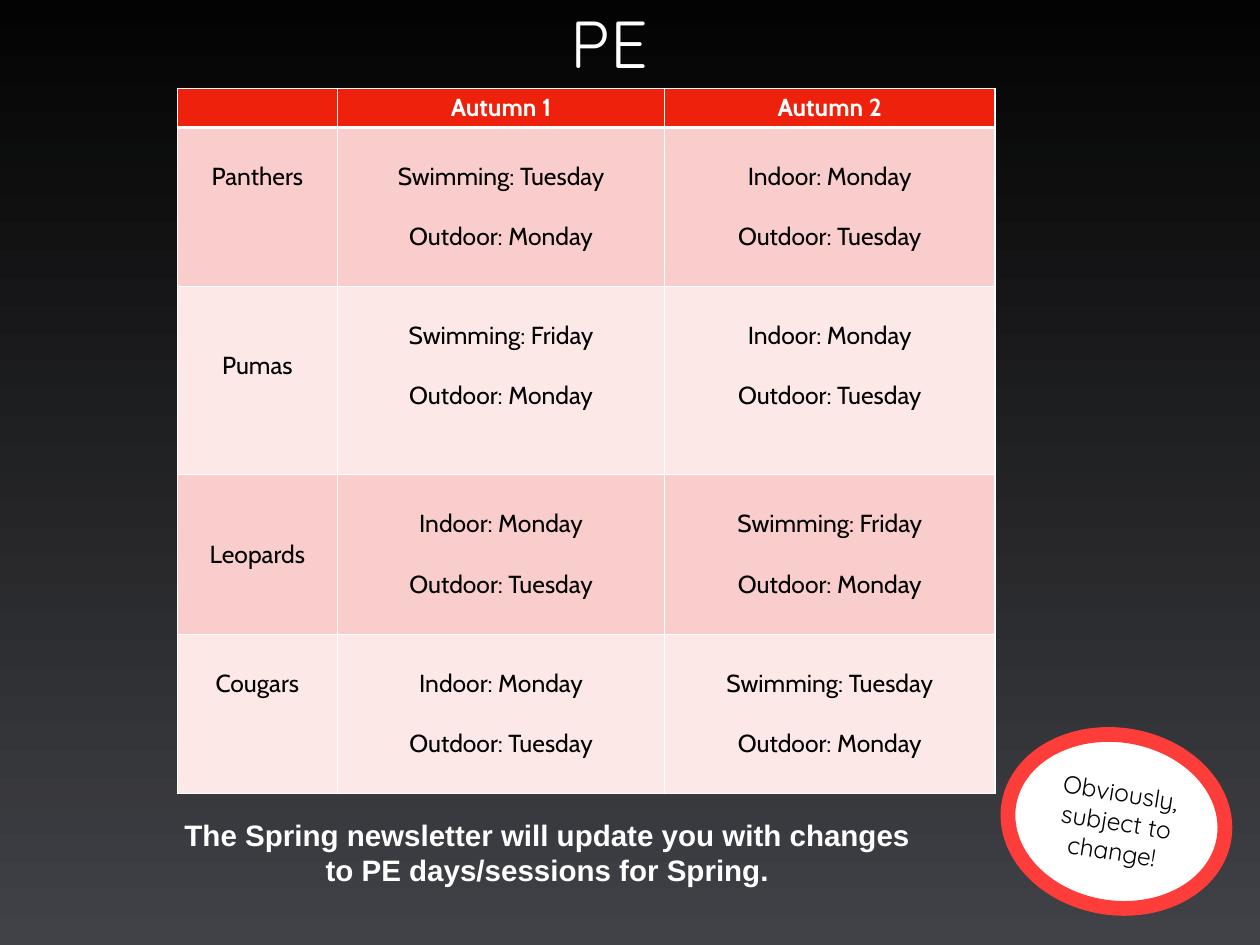
from lxml.etree import SubElement
from pptx import Presentation
from pptx.dml.color import RGBColor
from pptx.enum.shapes import MSO_SHAPE
from pptx.enum.text import MSO_ANCHOR, PP_ALIGN
from pptx.oxml.ns import qn
from pptx.util import Inches, Pt

WHITE = RGBColor(0xFF, 0xFF, 0xFF)
BLACK = RGBColor(0x00, 0x00, 0x00)
BG_TOP = RGBColor(0x03, 0x03, 0x03)
BG_BOTTOM = RGBColor(0x41, 0x42, 0x47)
HEADER = RGBColor(0xEE, 0x22, 0x0C)
BANDS = [RGBColor(0xFC, 0xE8, 0xE7), RGBColor(0xF8, 0xCD, 0xCC)]
RING = RGBColor(0xFC, 0x3D, 0x39)
LINE = 0.34  # height of one line of table text


def write(sp, text, font, size, color, anchor, bold=False):
    tf = sp.text_frame
    tf.word_wrap = True
    tf.vertical_anchor = anchor
    tf.margin_left = tf.margin_right = Inches(0.06)
    tf.margin_top = tf.margin_bottom = Inches(0.06)
    p = tf.paragraphs[0]
    p.text = text
    p.alignment = PP_ALIGN.CENTER
    p.font.name, p.font.size, p.font.bold = font, Pt(size), bold
    p.font.color.rgb = color


def add_border(cell, side, width):
    ln = SubElement(cell._tc.get_or_add_tcPr(), qn(f"a:ln{side}"), w=str(Pt(width)))
    fill = SubElement(ln, qn("a:solidFill"))
    SubElement(fill, qn("a:srgbClr"), val=str(WHITE))


prs = Presentation()
prs.slide_width, prs.slide_height = Inches(14.22), Inches(10.67)
s = prs.slides.add_slide(prs.slide_layouts[6])

# Background
bg = s.background.fill
bg.gradient()
bg.gradient_angle = 270
for stop, color in zip(bg.gradient_stops, (BG_TOP, BG_BOTTOM)):
    stop.color.rgb = color

# Title
title = s.shapes.add_textbox(Inches(1.16), Inches(0.32), Inches(11.44), Inches(0.66))
write(title, "PE", "Quicksand", 54, WHITE, MSO_ANCHOR.BOTTOM)

# Timetable: class, sessions per half term
rows = [
    ("", "Autumn 1", "Autumn 2"),
    ("Panthers", "Swimming: Tuesday\nOutdoor: Monday", "Indoor: Monday\nOutdoor: Tuesday"),
    ("Pumas", "Swimming: Friday\nOutdoor: Monday", "Indoor: Monday\nOutdoor: Tuesday"),
    ("Leopards", "Indoor: Monday\nOutdoor: Tuesday", "Swimming: Friday\nOutdoor: Monday"),
    ("Cougars", "Indoor: Monday\nOutdoor: Tuesday", "Swimming: Tuesday\nOutdoor: Monday"),
]
col_widths = [1.81, 3.69, 3.73]
row_heights = [0.44, 1.79, 2.13, 1.8, 1.8]
lowered = ("Pumas", "Leopards")  # names set one line further down

table = s.shapes.add_table(len(rows), len(col_widths), Inches(2), Inches(1),
                           Inches(sum(col_widths)), Inches(sum(row_heights))).table
for col, width in zip(table.columns, col_widths):
    col.width = Inches(width)
for i, (row, height) in enumerate(zip(rows, row_heights)):
    table.rows[i].height = Inches(height)
    for j, text in enumerate(row):
        cell = table.cell(i, j)
        for side in "LRTB":
            thick = (i, side) in ((0, "B"), (1, "T"))
            add_border(cell, side, 3 if thick else 1)
        cell.fill.solid()
        cell.fill.fore_color.rgb = BANDS[i % 2] if i else HEADER
        lines_above = (2 if text in lowered else 1) if i else 0
        cell.margin_top = Inches(0.05 + lines_above * LINE)
        cell.text = text
        for k, p in enumerate(cell.text_frame.paragraphs):
            p.alignment = PP_ALIGN.CENTER
            p.space_before = Inches(LINE) if k else Pt(0)
            p.font.name, p.font.size, p.font.bold = "Cabin", Pt(20), i == 0
            p.font.color.rgb = BLACK if i else WHITE

# Tilted badge
badge = s.shapes.add_shape(MSO_SHAPE.OVAL, Inches(11.37), Inches(8.3), Inches(2.46), Inches(1.95))
badge.rotation = 9
badge.shadow.inherit = False
badge.fill.solid()
badge.fill.fore_color.rgb = WHITE
badge.line.color.rgb = RING
badge.line.width = Pt(12)
write(badge, "Obviously, subject to change!", "Quicksand", 20, BLACK, MSO_ANCHOR.MIDDLE)

# Footer note
note = s.shapes.add_textbox(Inches(2), Inches(9.16), Inches(8.35), Inches(0.92))
write(note, "The Spring newsletter will update you with changes to PE days/sessions for Spring.",
      "Arial", 24, WHITE, MSO_ANCHOR.MIDDLE, bold=True)

prs.save("out.pptx")
